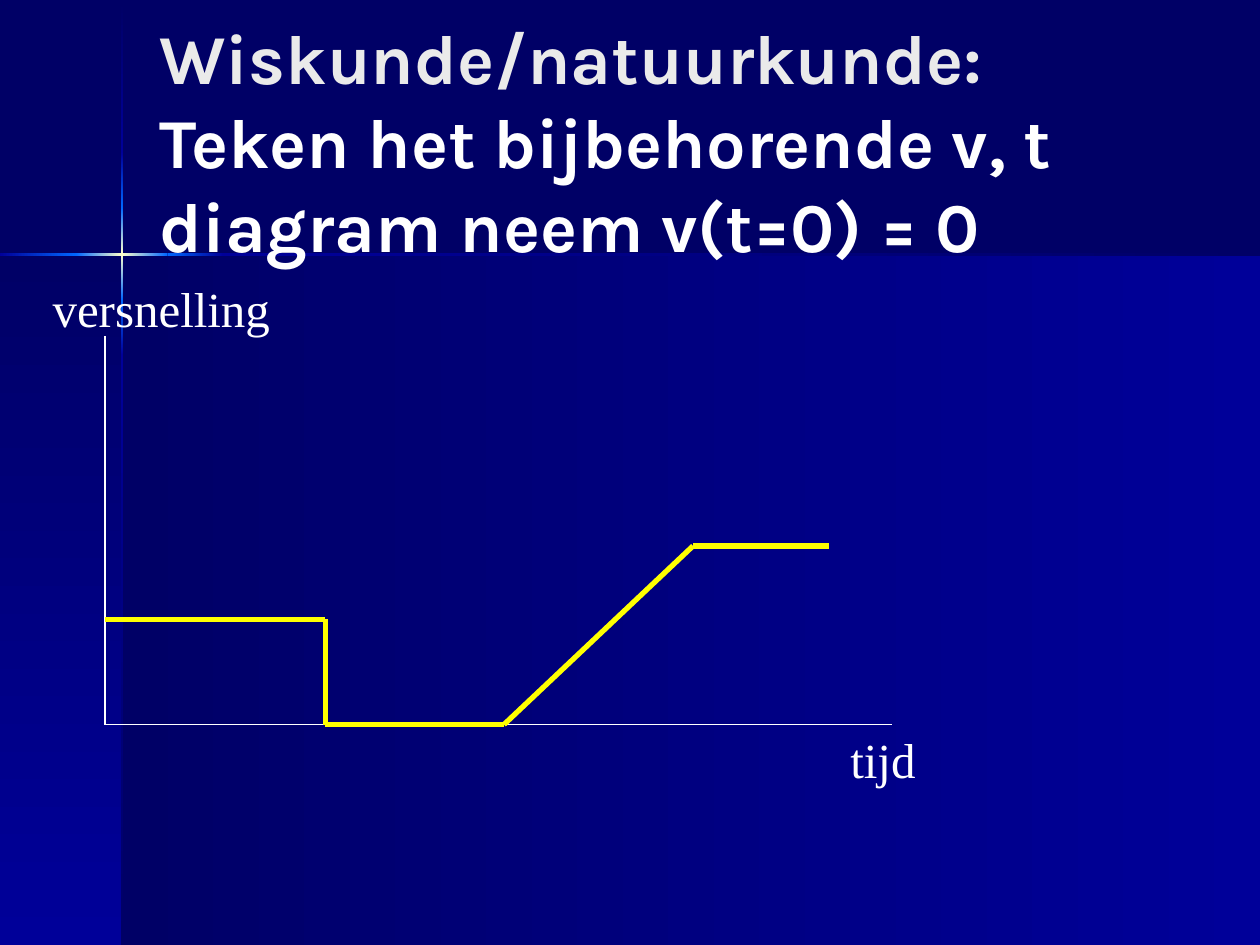
from copy import deepcopy
from itertools import pairwise

from pptx import Presentation
from pptx.dml.color import RGBColor
from pptx.enum.shapes import MSO_CONNECTOR as CONN, MSO_SHAPE as SHAPE
from pptx.enum.text import MSO_ANCHOR as ANCHOR, MSO_AUTO_SIZE as AUTO
from pptx.oxml.ns import qn
from pptx.util import Pt

NAVY, BLUE, BRIGHT, CREAM = "000066", "000099", "0066FF", "FFFFCC"
WHITE, YELLOW = "FFFFFF", "FFFF00"
DOWN, RIGHT = 270, 0  # gradient angles, counter-clockwise


def rgb(color):
    return RGBColor.from_string(color)


prs = Presentation()
prs.slide_width, prs.slide_height = Pt(720), Pt(540)
s = prs.slides.add_slide(prs.slide_layouts[6])
s.background.fill.solid()
s.background.fill.fore_color.rgb = rgb(NAVY)

# Background: two panels, then a thin glowing cross along their edges
cross_x, cross_y, thick = 69.12, 144.72, 1.44
panels = [
    (70, 145.5, 650, 394.5, RIGHT, [NAVY, BLUE]),
    (0, 145.5, 70, 394.5, DOWN, [NAVY, BLUE]),
]
glow = [[BLUE, BRIGHT], [BRIGHT, CREAM, BRIGHT], [BRIGHT, BLUE], [BLUE, NAVY]]
for (a, b), colors in zip(pairwise([0.7, 87.1, 118.8, 171.4, 203, 540]), [[NAVY, BLUE]] + glow):
    panels.append((cross_x, a, thick, b - a, DOWN, colors))
for (a, b), colors in zip(pairwise([0, 43.5, 95.8, 127.4, 720]), glow):
    panels.append((a, cross_y, b - a, thick, RIGHT, colors))

for x, y, w, h, angle, colors in panels:
    sp = s.shapes.add_shape(SHAPE.RECTANGLE, Pt(x), Pt(y), Pt(w), Pt(h))
    sp.shadow.inherit = False
    sp.line.fill.background()
    sp.fill.gradient()
    sp.fill.gradient_angle = angle
    stops = sp._element.spPr.find(".//" + qn("a:gsLst"))
    for _ in colors[2:]:
        stops.insert(1, deepcopy(stops[0]))
    for i, (stop, color) in enumerate(zip(sp.fill.gradient_stops, colors)):
        stop.position = i / (len(colors) - 1)
        stop.color.rgb = rgb(color)

# Title and axis labels
title_font = {"name": "Karla", "size": Pt(40), "bold": True}
label_font = {"name": "Times New Roman", "size": Pt(28)}
title_frame = {"word_wrap": True, "vertical_anchor": ANCHOR.MIDDLE}
label_frame = {"word_wrap": False, "auto_size": AUTO.SHAPE_TO_FIT_TEXT}
texts = [
    (84.24, 23.76, 594, 113.04, title_frame, title_font,
     [("Wiskunde/natuurkunde: ", "EAEAEA"),
      ("Teken het bijbehorende v, t diagram neem v(t=0) = 0", WHITE)]),
    (478.8, 413.3, 51.8, 41, label_frame, label_font, [("tijd", WHITE)]),
    (23, 155.5, 139, 41, label_frame, label_font, [("versnelling", WHITE)]),
]
for x, y, w, h, frame, font, runs in texts:
    tf = s.shapes.add_textbox(Pt(x), Pt(y), Pt(w), Pt(h)).text_frame
    for key, value in frame.items():
        setattr(tf, key, value)
    p = tf.paragraphs[0]
    for text, color in runs:
        r = p.add_run()
        r.text = text
        r.font.color.rgb = rgb(color)
        for key, value in font.items():
            setattr(r.font, key, value)

# Axes and acceleration graph
axes = [(60, 192), (60, 414), (510, 414)]
graph = [(60, 354), (186, 354), (186, 414), (288, 414), (396, 312), (474, 312)]
for points, color, width in [(axes, WHITE, 1), (graph, YELLOW, 3)]:
    for (x1, y1), (x2, y2) in pairwise(points):
        line = s.shapes.add_connector(CONN.STRAIGHT, Pt(x1), Pt(y1), Pt(x2), Pt(y2))
        line.line.color.rgb = rgb(color)
        line.line.width = Pt(width)
        spPr = line._element.spPr
        spPr.append(spPr.makeelement(qn("a:effectLst"), {}))

prs.save("out.pptx")
